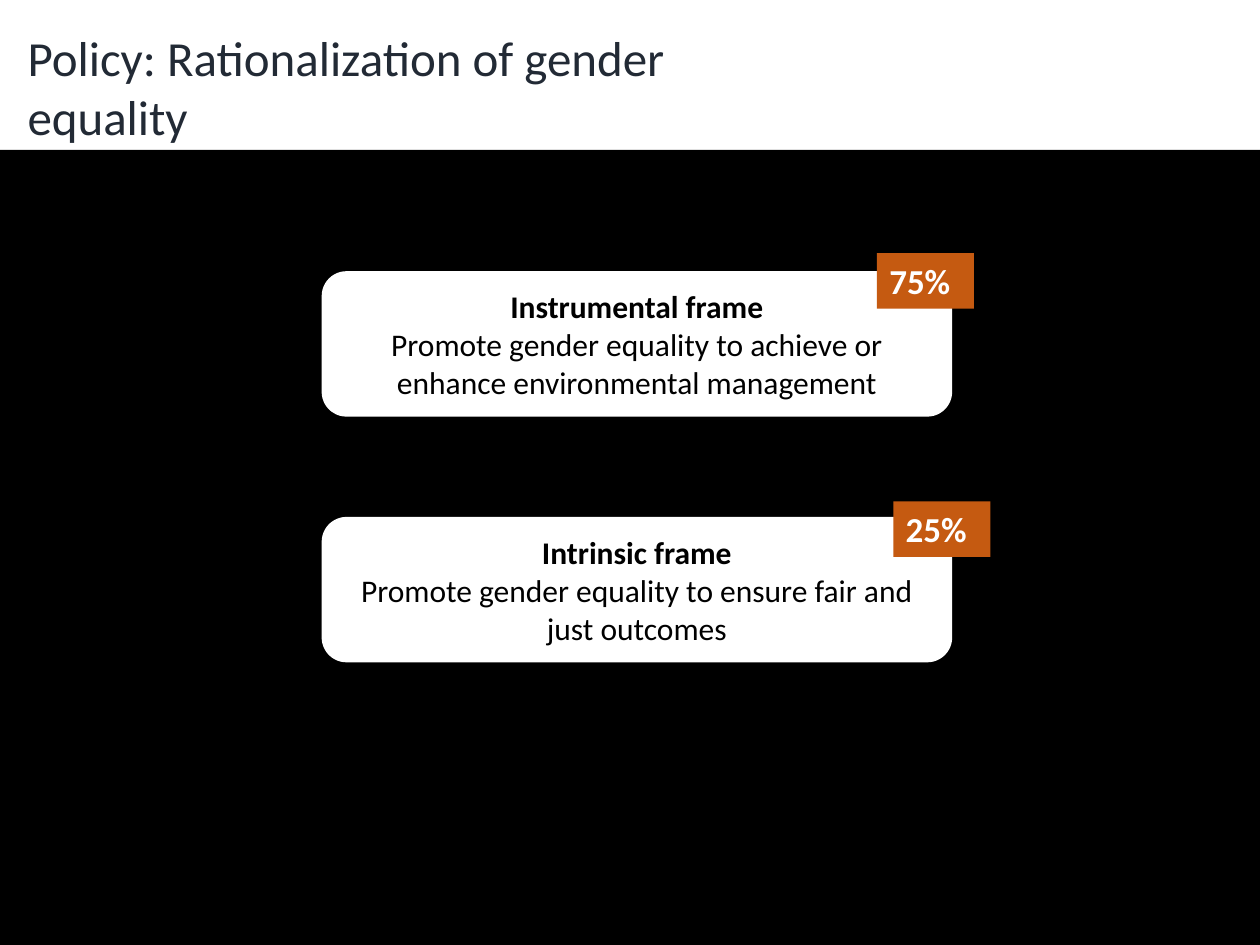
import pptx
import pptx.util
import pptx.dml.color
import pptx.enum.shapes
import pptx.enum.text

# Content
TITLE = "Policy: Rationalization of gender equality"
# heading, statement, share, badge left and top
FRAMES = [
    ("Instrumental frame",
     "Promote gender equality to achieve or enhance environmental management",
     "75%", 6.96, 2.01),
    ("Intrinsic frame",
     "Promote gender equality to ensure fair and just outcomes",
     "25%", 7.09, 3.98),
]

# Layout in inches
WIDTH, HEIGHT = 10, 7.5
PANEL_TOP = 1.19
CARD_LEFT, CARD_TOP, CARD_WIDTH, CARD_HEIGHT = 2.56, 2.16, 4.99, 1.14
CARD_STEP = 1.95
BADGE_WIDTH, BADGE_HEIGHT = 0.77, 0.44

SHAPES = pptx.enum.shapes.MSO_SHAPE
ALIGN = pptx.enum.text.PP_ALIGN
ANCHOR = pptx.enum.text.MSO_ANCHOR


def color(value):
    return pptx.dml.color.RGBColor.from_string(value)


def inches(*lengths):
    return [pptx.util.Inches(length) for length in lengths]


def add_block(page, kind, area, fill, line=None):
    block = page.shapes.add_shape(kind, *inches(*area))
    block.shadow.inherit = False
    block.fill.solid()
    block.fill.fore_color.rgb = color(fill)
    if line:
        block.line.color.rgb = color(line)
        block.line.width = pptx.util.Pt(1)
    else:
        block.line.fill.background()
    return block


def write(box, text, size=18, fill="000000", bold=False,
          align=ALIGN.LEFT, anchor=ANCHOR.TOP, new=False):
    frame = box.text_frame
    frame.word_wrap = True
    frame.vertical_anchor = anchor
    para = frame.add_paragraph() if new else frame.paragraphs[0]
    para.alignment = align
    span = para.add_run()
    span.text = text
    span.font.name = "Calibri"
    span.font.size = pptx.util.Pt(size)
    span.font.bold = bold
    span.font.color.rgb = color(fill)


deck = pptx.Presentation()
deck.slide_width, deck.slide_height = inches(WIDTH, HEIGHT)
page = deck.slides.add_slide(deck.slide_layouts[6])

# Dark panel below the title
add_block(page, SHAPES.RECTANGLE,
          (-0.01, PANEL_TOP, 10.12, HEIGHT - PANEL_TOP), "000000")

# Frame cards
for row, (heading, statement, *_) in enumerate(FRAMES):
    area = (CARD_LEFT, CARD_TOP + row * CARD_STEP, CARD_WIDTH, CARD_HEIGHT)
    card = add_block(page, SHAPES.ROUNDED_RECTANGLE, area, "FFFFFF", line="FFFFFF")
    centred = {"align": ALIGN.CENTER, "anchor": ANCHOR.MIDDLE}
    write(card, heading, bold=True, **centred)
    write(card, statement, new=True, **centred)

# Percentage badges
for *_, share, left, top in FRAMES:
    badge = add_block(page, SHAPES.RECTANGLE,
                      (left, top, BADGE_WIDTH, BADGE_HEIGHT), "C55A11")
    write(badge, share, size=20, fill="FFFFFF", bold=True)
    badge.text_frame.auto_size = pptx.enum.text.MSO_AUTO_SIZE.SHAPE_TO_FIT_TEXT

# Title
title = page.shapes.add_textbox(*inches(0.12, 0.17, 5.55, 1.04))
write(title, TITLE, size=28, fill="222A35")
title.text_frame.auto_size = pptx.enum.text.MSO_AUTO_SIZE.SHAPE_TO_FIT_TEXT

deck.save("out.pptx")
